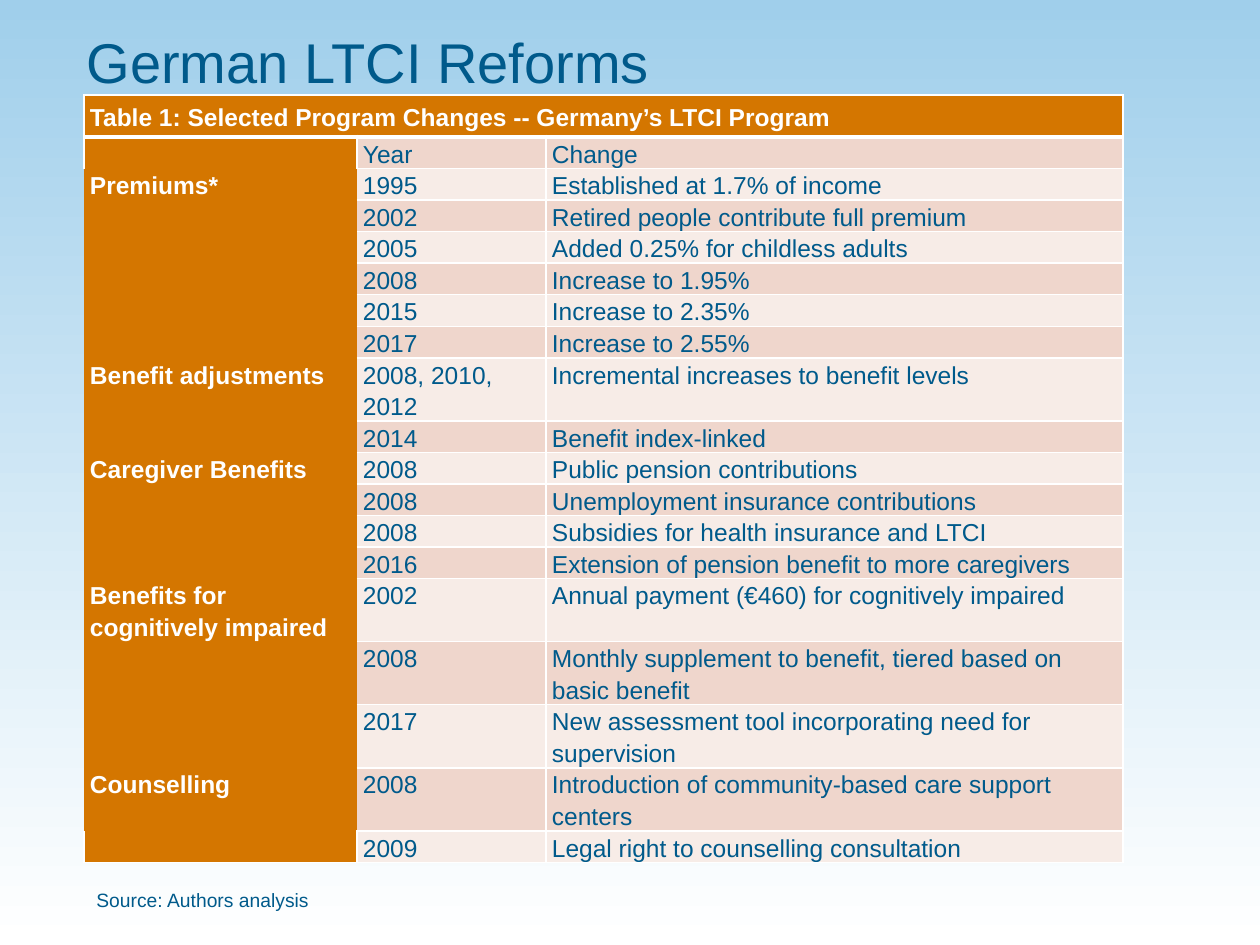
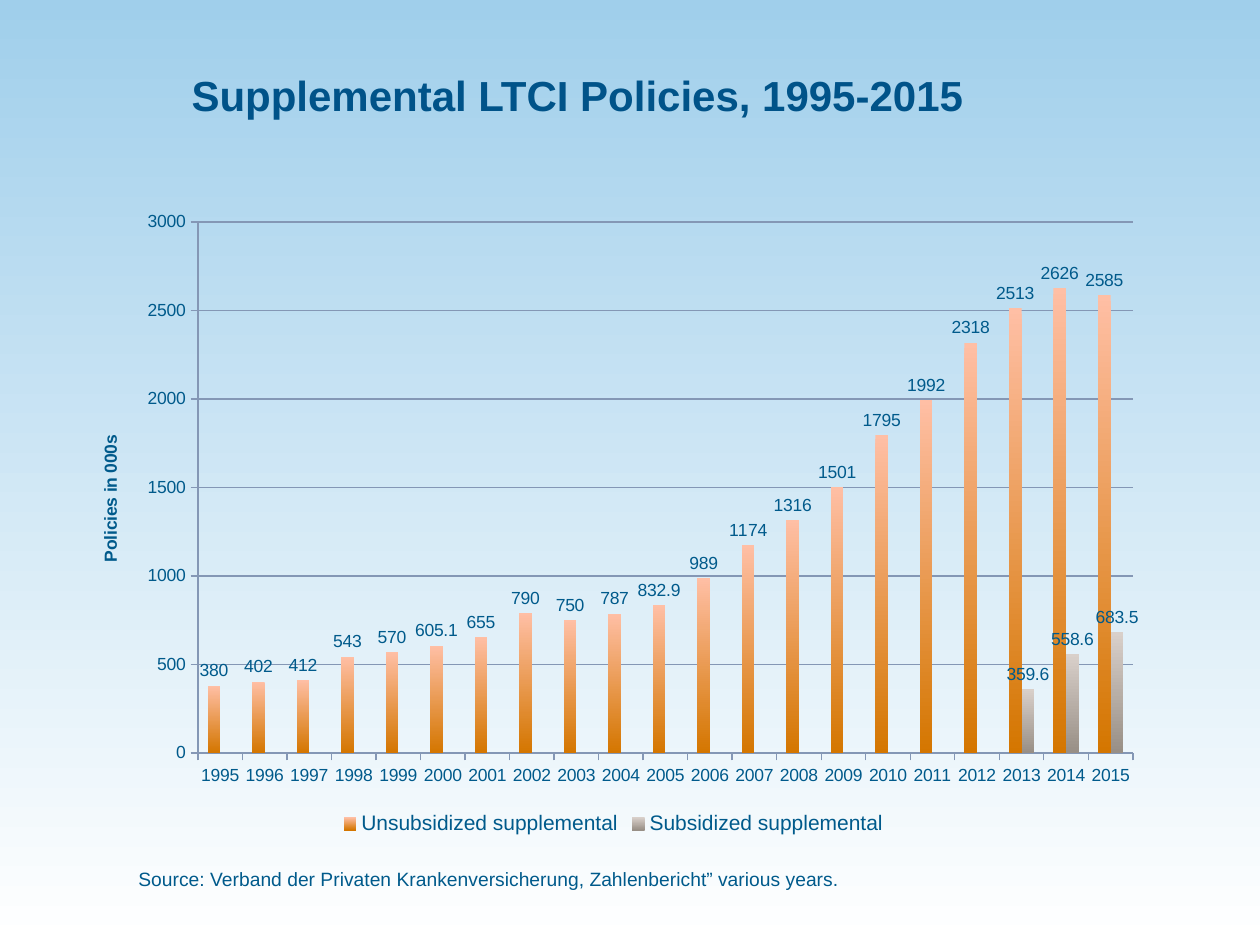
from lxml import etree
from pptx import Presentation
from pptx.chart.data import CategoryChartData
from pptx.dml.color import RGBColor
from pptx.enum.chart import XL_CHART_TYPE, XL_LABEL_POSITION, XL_LEGEND_POSITION, XL_TICK_MARK
from pptx.enum.text import MSO_ANCHOR, PP_ALIGN
from pptx.oxml import parse_xml
from pptx.oxml.ns import nsdecls, qn
from pptx.util import Pt

COLUMNS = XL_CHART_TYPE.COLUMN_CLUSTERED
ABOVE = XL_LABEL_POSITION.OUTSIDE_END
BELOW = XL_LEGEND_POSITION.BOTTOM
OUT = XL_TICK_MARK.OUTSIDE
TOP, MIDDLE = MSO_ANCHOR.TOP, MSO_ANCHOR.MIDDLE
LEFT, CENTER = PP_ALIGN.LEFT, PP_ALIGN.CENTER

FONT = "Arial"
INK, NAVY, WHITE = "005A8B", "005389", "FFFFFF"
SKY, ORANGE, GRAY, RULE = "A0CFEB", "D47600", "988F86", "8497B5"
PEACH, SILVER = "FFBFA5", "D9D0CA"
BANDS = ("F7ECE7", "EFD6CC")

HEAD = "Table 1: Selected Program Changes -- Germany’s LTCI Program"
ROWS = [
    ("", "Year", "Change"),
    ("Premiums*", "1995", "Established at 1.7% of income"),
    ("", "2002", "Retired people contribute full premium"),
    ("", "2005", "Added 0.25% for childless adults"),
    ("", "2008", "Increase to 1.95%"),
    ("", "2015", "Increase to 2.35%"),
    ("", "2017", "Increase to 2.55%"),
    ("Benefit adjustments", "2008, 2010, 2012", "Incremental increases to benefit levels"),
    ("", "2014", "Benefit index-linked"),
    ("Caregiver Benefits", "2008", "Public pension contributions"),
    ("", "2008", "Unemployment insurance contributions"),
    ("", "2008", "Subsidies for health insurance and LTCI"),
    ("", "2016", "Extension of pension benefit to more caregivers"),
    ("Benefits for cognitively impaired", "2002",
     "Annual payment (€460) for cognitively impaired"),
    ("", "2008", "Monthly supplement to benefit, tiered based on basic benefit"),
    ("", "2017", "New assessment tool incorporating need for supervision"),
    ("Counselling", "2008", "Introduction of community-based care support centers"),
    ("", "2009", "Legal right to counselling consultation"),
]
TALL = {8, 14, 15, 16, 17}
YEARS = [str(year) for year in range(1995, 2016)]
PLAIN = [380, 402, 412, 543, 570, 605.1, 655, 790, 750, 787, 832.9, 989,
         1174, 1316, 1501, 1795, 1992, 2318, 2513, 2626, 2585]
FUNDED = [None] * 18 + [359.6, 558.6, 683.5]


def px(*sizes):
    return [round(size * 914400 / 126) for size in sizes]


def tint(code):
    return RGBColor.from_string(code)


def style(font, size, color=INK, bold=False):
    font.name, font.size, font.bold = FONT, Pt(size), bold
    font.color.rgb = tint(color)


def write(frame, text, size=11, color=INK, bold=False, align=None, space=None):
    para = frame.paragraphs[0]
    if align is not None:
        para.alignment = align
    if space:
        para.line_spacing = Pt(space)
    if text:
        run = para.add_run()
        run.text = text
        style(run.font, size, color, bold)
    else:
        etree.SubElement(para._p, qn("a:endParaRPr")).set("sz", str(size * 100))


def fade(fill, start, end):
    fill.gradient()
    fill.gradient_angle = 270
    for stop, code in zip(fill.gradient_stops, (start, end)):
        stop.color.rgb = tint(code)


def edge(cell, **widths):
    props = cell._tc.get_or_add_tcPr()
    for side in "LRTB":
        line = etree.SubElement(props, qn(f"a:ln{side}"))
        if side in widths:
            line.set("w", str(Pt(widths[side])))
            fill = etree.SubElement(line, qn("a:solidFill"))
            etree.SubElement(fill, qn("a:srgbClr")).set("val", WHITE)
        else:
            etree.SubElement(line, qn("a:noFill"))


def place(chart, box, inner):
    area = chart._chartSpace.find(".//" + qn("c:plotArea"))
    for old in area.findall(qn("c:layout")):
        area.remove(old)
    x, y, wide, high = box
    left, top, width, height = inner
    parts = dict(x=(left - x) / wide, y=(top - y) / high, w=width / wide, h=height / high)
    marks = "".join(f'<c:{key}Mode val="edge"/>' for key in "xy")
    marks += "".join(f'<c:{key} val="{part:.4f}"/>' for key, part in parts.items())
    area.insert(0, parse_xml(
        f'<c:layout {nsdecls("c")}><c:manualLayout><c:layoutTarget val="inner"/>'
        f"{marks}</c:manualLayout></c:layout>"))


class Deck:
    """Holds the shared style and the current slide."""

    def __init__(self):
        self.file = Presentation()
        self.file.slide_width, self.file.slide_height = px(1260, 945)
        fade(self.file.slide_master.background.fill, SKY, WHITE)

    def start(self, text, box, anchor=MIDDLE, **form):
        self.slide = self.file.slides.add_slide(self.file.slide_layouts[5])
        title = self.slide.shapes.title
        title.left, title.top, title.width, title.height = px(*box)
        title.text_frame.vertical_anchor = anchor
        write(title.text_frame, text, **form)

    def note(self, text, box):
        frame = self.slide.shapes.add_textbox(*px(*box)).text_frame
        frame.word_wrap = True
        write(frame, text)

    def cell(self, cell, text, fill, edges, **form):
        cell.margin_left, cell.margin_right = px(6, 6)
        cell.margin_top = cell.margin_bottom = 0
        edge(cell, **edges)
        cell.fill.solid()
        cell.fill.fore_color.rgb = tint(fill)
        write(cell.text_frame, text, size=14, space=18, **form)

    def table(self, head, rows, box, widths):
        grid = self.slide.shapes.add_table(len(rows) + 1, len(widths), *px(*box)).table
        for column, width in zip(grid.columns, px(*widths)):
            column.width = width
        for index, row in enumerate(grid.rows):
            row.height, = px(42 if index == 0 else 62 if index in TALL else 28)
        for col in range(len(widths)):
            self.cell(grid.cell(0, col), "" if col else head, ORANGE,
                      dict(L=1, R=1, T=1, B=3), color=WHITE, bold=True)
        grid.cell(0, 0).merge(grid.cell(0, len(widths) - 1))
        grid.cell(0, 0).vertical_anchor = MIDDLE
        last = len(rows)
        for index, row in enumerate(rows, 1):
            for col, text in enumerate(row):
                sides = "LRTB"
                if col == 0:
                    sides = {1: "LRT", last: "LRB"}.get(index, "")
                elif col == 1 and 1 < index < last:
                    sides = "RTB"
                self.cell(grid.cell(index, col), text, BANDS[index % 2] if col else ORANGE,
                          dict.fromkeys(sides, 1), color=INK if col else WHITE, bold=col == 0)

    def chart(self, names, groups, label, box, inner):
        data = CategoryChartData()
        data.categories = names
        for name, values, *_ in groups:
            data.add_series(name, values)
        chart = self.slide.shapes.add_chart(COLUMNS, *px(*box), data).chart
        chart.has_title = False
        style(chart.font, 10)
        chart.has_legend = True
        chart.legend.position = BELOW
        chart.legend.include_in_layout = False
        style(chart.legend.font, 12)
        plot = chart.plots[0]
        plot.gap_width, plot.overlap, plot.vary_by_categories = 150, 0, False
        for series, (_, _, light, dark) in zip(plot.series, groups):
            fade(series.format.fill, light, dark)
            labels = series.data_labels
            labels.show_value, labels.position = True, ABOVE
            style(labels.font, 10)
        scale = chart.value_axis
        scale.minimum_scale, scale.maximum_scale, scale.major_unit = 0, 3000, 500
        scale.has_major_gridlines = True
        write(scale.axis_title.text_frame, label, size=10, bold=True)
        for axis in (scale, chart.category_axis):
            axis.major_tick_mark = OUT
            style(axis.tick_labels.font, 10)
        for item in (scale, chart.category_axis, scale.major_gridlines):
            item.format.line.color.rgb = tint(RULE)
            item.format.line.width = Pt(0.75)
        place(chart, box, inner)


def main():
    deck = Deck()
    deck.start("German LTCI Reforms", (74, 19, 987, 84), size=32, align=LEFT)
    deck.table(HEAD, ROWS, (84, 95, 1039, 766), (273, 189, 577))
    deck.note("Source: Authors analysis", (84, 882, 788, 37))

    deck.start("Supplemental LTCI Policies, 1995-2015", (84, 63, 987, 136), anchor=TOP,
               size=24, color=NAVY, bold=True, align=CENTER)
    deck.chart(YEARS, [("Unsubsidized supplemental", PLAIN, PEACH, ORANGE),
                       ("Subsidized supplemental", FUNDED, SILVER, GRAY)],
               "Policies in 000s", (73, 200, 1081, 640), (198, 222, 935, 531))
    deck.note("Source: Verband der Privaten Krankenversicherung, Zahlenbericht” various years.",
              (126, 861, 756, 37))
    deck.file.save("out.pptx")


if __name__ == "__main__":
    main()
